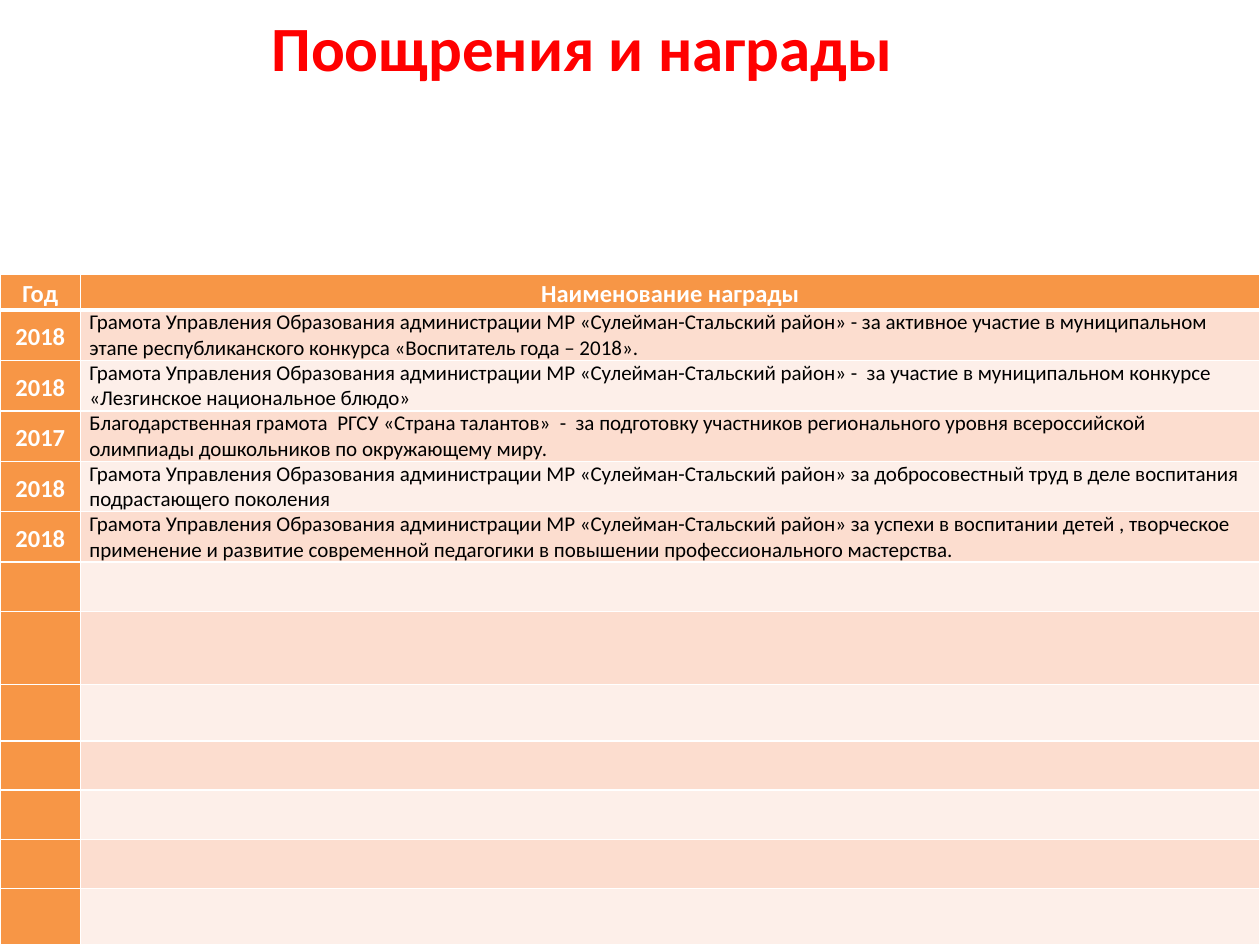
from dataclasses import dataclass

from lxml.etree import SubElement
from pptx import Presentation
from pptx.dml.color import RGBColor
from pptx.enum.text import MSO_ANCHOR as Anchor, PP_ALIGN as Align
from pptx.oxml.ns import qn
from pptx.util import Inches, Pt


@dataclass(frozen=True)
class Theme:
    font: str = "Calibri"
    title: str = "FF0000"
    accent: str = "F79646"
    bands: tuple = ("FCDDCF", "FDEFE9")
    white: str = "FFFFFF"
    black: str = "000000"
    title_size: int = 36
    label_size: int = 14
    body_size: int = 12
    border: int = 1
    header_border: int = 3


THEME = Theme()
HEADERS = ("Год", "Наименование награды")
DISTRICT = "Грамота Управления Образования администрации МР «Сулейман-Стальский район»"
AWARDS = (
    ("2018", f"{DISTRICT} - за активное участие в муниципальном этапе "
             "республиканского конкурса «Воспитатель года – 2018»."),
    ("2018", f"{DISTRICT} -  за участие в муниципальном конкурсе "
             "«Лезгинское национальное блюдо»"),
    ("2017", "Благодарственная грамота  РГСУ «Страна талантов»  -  за подготовку участников "
             "регионального уровня всероссийской олимпиады дошкольников по окружающему миру."),
    ("2018", f"{DISTRICT} за добросовестный труд в деле воспитания подрастающего поколения"),
    ("2018", f"{DISTRICT} за успехи в воспитании детей , творческое применение и развитие "
             "современной педагогики в повышении профессионального мастерства."),
)
COLUMN_WIDTHS = (0.64, 9.36)
ROW_HEIGHTS = (0.28, 0.39, 0.25, 0.39, 0.39, 0.39, 0.39, 0.58, 0.45, 0.39, 0.39, 0.39, 0.45)
CELL_MARGINS = {
    "margin_left": Inches(0.07), "margin_right": Inches(0.07),
    "margin_top": 0, "margin_bottom": 0,
}
LABEL = {"size": THEME.label_size, "color": THEME.white, "bold": True,
         "alignment": Align.CENTER, "line_spacing": 1.15}
BODY = {"size": THEME.body_size, "color": THEME.black, "bold": False,
        "alignment": Align.LEFT, "line_spacing": 1.0}
TITLE = {"size": THEME.title_size, "color": THEME.title, "bold": True,
         "alignment": Align.CENTER, "line_spacing": 1.0}


def set_attributes(target, values):
    for name, value in values.items():
        setattr(target, name, value)


def write_text(frame, text, style):
    paragraph = frame.paragraphs[0]
    set_attributes(paragraph, {key: style[key] for key in ("alignment", "line_spacing")})
    font = paragraph.font
    if text:
        run = paragraph.add_run()
        run.text = text
        font = run.font
    set_attributes(font, {"name": THEME.font, "size": Pt(style["size"]), "bold": style["bold"]})
    font.color.rgb = RGBColor.from_string(style["color"])


def set_borders(cell, top, bottom):
    """Draw white cell borders; the schema wants them ahead of the fill."""
    properties = cell._tc.get_or_add_tcPr()
    widths = {"lnL": THEME.border, "lnR": THEME.border, "lnT": top, "lnB": bottom}
    for index, (side, width) in enumerate(widths.items()):
        line = SubElement(properties, qn(f"a:{side}"), w=str(Pt(width)))
        fill = SubElement(line, qn("a:solidFill"))
        SubElement(fill, qn("a:srgbClr"), val=THEME.white)
        properties.insert(index, line)


def add_title(slide, left, top, width, height):
    box = slide.shapes.add_textbox(left, top, width, height)
    set_attributes(box.text_frame, {"word_wrap": True, "vertical_anchor": Anchor.MIDDLE})
    write_text(box.text_frame, "Поощрения и награды", TITLE)


def add_awards_table(slide, left, top, width, height):
    shape = slide.shapes.add_table(len(ROW_HEIGHTS), len(COLUMN_WIDTHS), left, top, width, height)
    table = shape.table
    for column, column_width in zip(table.columns, COLUMN_WIDTHS):
        column.width = Inches(column_width)

    contents = [HEADERS, *AWARDS]
    contents += [("", "")] * (len(ROW_HEIGHTS) - len(contents))
    for row_index, (row, row_height, texts) in enumerate(zip(table.rows, ROW_HEIGHTS, contents)):
        row.height = Inches(row_height)
        is_header = row_index == 0
        for column_index, (cell, text) in enumerate(zip(row.cells, texts)):
            is_label = is_header or column_index == 0
            color = THEME.accent if is_label else THEME.bands[(row_index - 1) % 2]
            is_year = is_label and not is_header
            anchor = Anchor.MIDDLE if is_year else Anchor.TOP
            set_attributes(cell, CELL_MARGINS | {"vertical_anchor": anchor})
            cell.fill.solid()
            cell.fill.fore_color.rgb = RGBColor.from_string(color)
            set_borders(cell,
                        top=THEME.header_border if row_index == 1 else THEME.border,
                        bottom=THEME.header_border if is_header else THEME.border)
            write_text(cell.text_frame, text, LABEL if is_label else BODY)


def main():
    presentation = Presentation()
    set_attributes(presentation, {"slide_width": Inches(10), "slide_height": Inches(7.5)})
    slide = presentation.slides.add_slide(presentation.slide_layouts[6])
    add_title(slide, Inches(0.12), Inches(-0.03), Inches(9), Inches(0.79))
    add_awards_table(slide, Inches(0), Inches(2.18), Inches(10), Inches(sum(ROW_HEIGHTS)))
    presentation.save("out.pptx")


if __name__ == "__main__":
    main()
